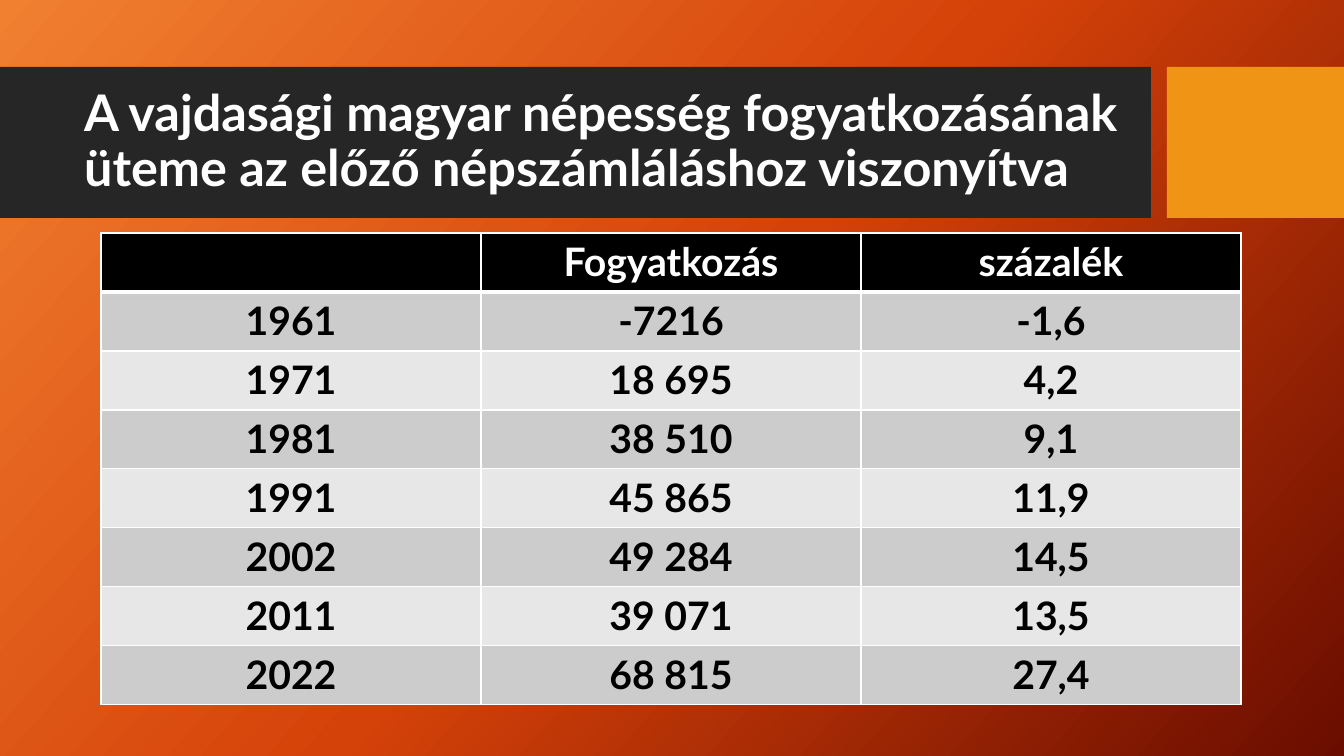
from copy import deepcopy

from lxml import etree
from pptx import Presentation
from pptx import util as u
from pptx.dml.color import RGBColor
from pptx.enum import shapes, text
from pptx.oxml.ns import qn

TITLE = "A vajdasági magyar népesség fogyatkozásának üteme az előző népszámláláshoz viszonyítva"
ROWS = [
    ("", "Fogyatkozás", "százalék"),
    ("1961", "-7216", "-1,6"),
    ("1971", "18 695", "4,2"),
    ("1981", "38 510", "9,1"),
    ("1991", "45 865", "11,9"),
    ("2002", "49 284", "14,5"),
    ("2011", "39 071", "13,5"),
    ("2022", "68 815", "27,4"),
]
COLORS = {
    "white": "FFFFFF", "black": "000000", "band": "262626", "accent": "F09415",
    "odd": "CCCCCC", "even": "E7E7E7",
}
BACKGROUND_STOPS = [(0, "F18031"), (0.5, "D54209"), (1, "6A0D00")]
BACKGROUND_ANGLE = 42
FONT = "Lato"

# Lengths in px: left, top, width, height
SLIDE_SIZE = (1344, 756)
BANDS = [((0, 67, 1151, 151), "band"), ((1167, 67, 177, 151), "accent")]
TITLE_BOX = (74, 83, 1060, 119)
TABLE_ORIGIN = (101, 233)
COLUMN_WIDTH, ROW_HEIGHT = 380, 59


def px(value):
    return round(value * 914400 / 100.8)


def rgb(name):
    return RGBColor.from_string(COLORS[name])


def add_run(paragraph, words, size, color):
    run = paragraph.add_run()
    run.text = words
    run.font.name = FONT
    run.font.size = u.Pt(size)
    run.font.bold = True
    run.font.color.rgb = rgb(color)


def paint_background(slide):
    fill = slide.background.fill
    fill.gradient()
    fill.gradient_angle = 360 - BACKGROUND_ANGLE
    stop_list = slide.element.find(".//" + qn("a:gsLst"))
    stop_list.insert(1, deepcopy(stop_list[0]))
    for stop, (position, color) in zip(fill.gradient_stops, BACKGROUND_STOPS):
        stop.position = position
        stop.color.rgb = RGBColor.from_string(color)


def add_band(slide, box, color):
    band = slide.shapes.add_shape(shapes.MSO_SHAPE.RECTANGLE, *map(px, box))
    band.shadow.inherit = False
    band.fill.solid()
    band.fill.fore_color.rgb = rgb(color)
    band.line.fill.background()


def set_title(slide):
    title = slide.shapes.title
    slide.shapes.element.append(title.element)  # in front of the bands
    title.left, title.top, title.width, title.height = map(px, TITLE_BOX)
    frame = title.text_frame
    frame.word_wrap = True
    frame.auto_size = text.MSO_AUTO_SIZE.NONE
    frame.vertical_anchor = text.MSO_ANCHOR.MIDDLE
    paragraph = frame.paragraphs[0]
    paragraph.alignment = text.PP_ALIGN.LEFT
    paragraph.line_spacing = 0.9
    add_run(paragraph, TITLE, 36, "white")


def set_borders(cell, top, bottom):
    """Draw white borders, 1 pt at the sides and the given points elsewhere."""
    properties = cell._tc.get_or_add_tcPr()
    for index, (side, width) in enumerate(zip("LRTB", (1, 1, top, bottom))):
        line = etree.Element(qn(f"a:ln{side}"), w=str(u.Pt(width)))
        solid = etree.SubElement(line, qn("a:solidFill"))
        etree.SubElement(solid, qn("a:srgbClr"), val=COLORS["white"])
        properties.insert(index, line)


def add_population_table(slide):
    column_count = len(ROWS[0])
    size = (COLUMN_WIDTH * column_count, ROW_HEIGHT * len(ROWS))
    table = slide.shapes.add_table(
        len(ROWS), column_count, *map(px, TABLE_ORIGIN + size)).table
    for column in table.columns:
        column.width = px(COLUMN_WIDTH)
    for index, values in enumerate(ROWS):
        table.rows[index].height = px(ROW_HEIGHT)
        header = index == 0
        fill = "black" if header else "odd" if index % 2 else "even"
        for cell, value in zip(table.rows[index].cells, values):
            cell.fill.solid()
            cell.fill.fore_color.rgb = rgb(fill)
            set_borders(cell, 3 if index == 1 else 1, 3 if header else 1)
            paragraph = cell.text_frame.paragraphs[0]
            paragraph.alignment = text.PP_ALIGN.CENTER
            if value:
                add_run(paragraph, value, 28, "white" if header else "black")


def main():
    presentation = Presentation()
    presentation.slide_width, presentation.slide_height = map(px, SLIDE_SIZE)
    slide = presentation.slides.add_slide(presentation.slide_layouts[5])
    paint_background(slide)
    for box, color in BANDS:
        add_band(slide, box, color)
    set_title(slide)
    add_population_table(slide)
    presentation.save("out.pptx")


if __name__ == "__main__":
    main()
